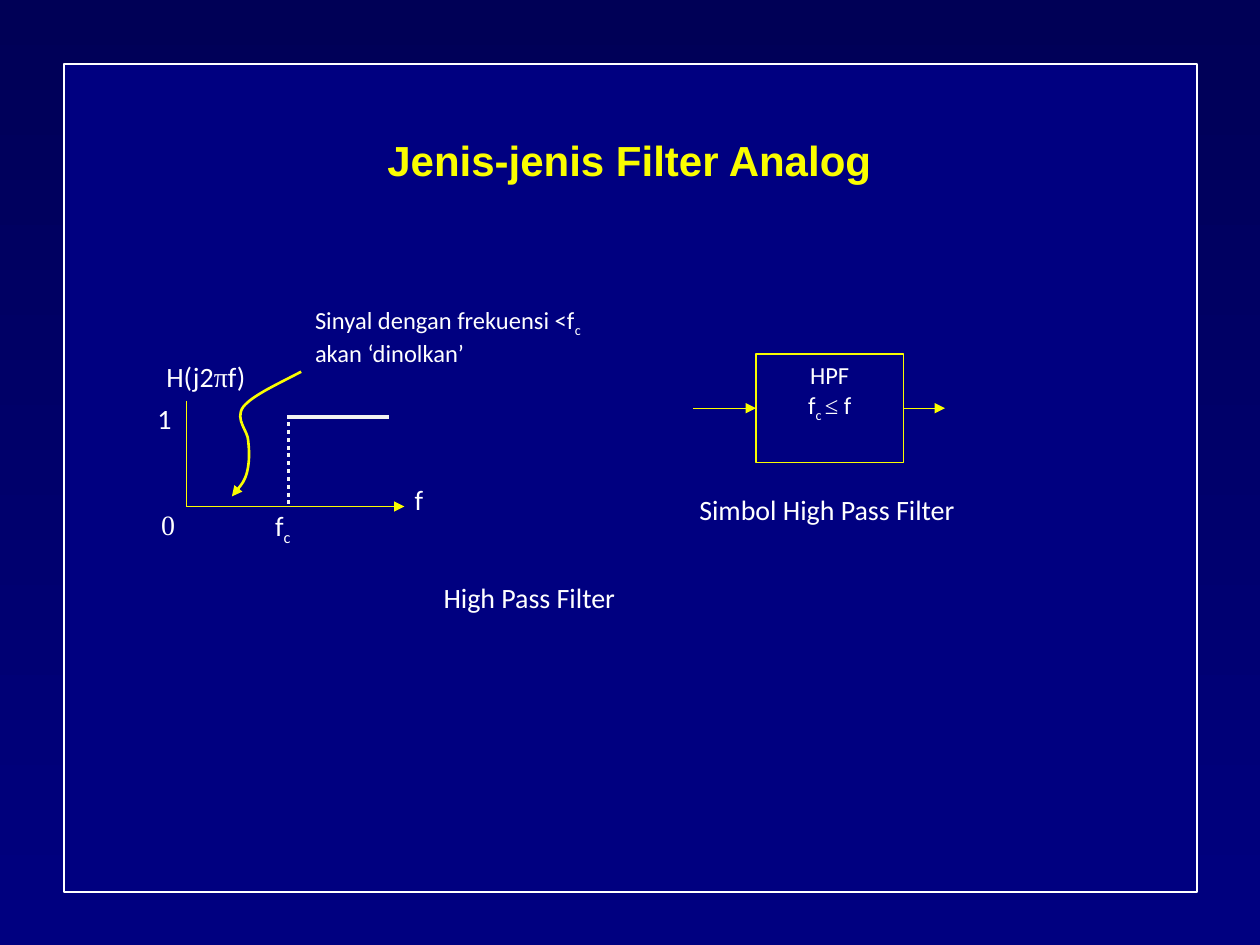
from dataclasses import dataclass

from lxml import etree
from pptx import Presentation
from pptx.dml.color import RGBColor
from pptx.enum.dml import MSO_LINE_DASH_STYLE as Dash
from pptx.enum.shapes import MSO_CONNECTOR as Connector, MSO_SHAPE as Shape
from pptx.enum.text import MSO_ANCHOR as Anchor, PP_ALIGN as Align
from pptx.oxml.ns import qn
from pptx.util import Inches, Pt


@dataclass(frozen=True)
class Theme:
    background_top: str = "000056"
    panel: str = "000080"
    white: str = "FFFFFF"
    response: str = "F2F2F2"
    yellow: str = "FAFD00"
    title_font: str = "Arial"
    body_font: str = "Calibri"
    symbol_font: str = "Times New Roman"
    title_size: float = 24
    label_size: float = 16
    note_size: float = 14
    thin: float = 0.75
    curve: float = 1.5
    thick: float = 2.25


THEME = Theme()


def color(value):
    return RGBColor.from_string(value)


def paint_background(slide):
    fill = slide.background.fill
    fill.gradient()
    fill.gradient_angle = 270
    for stop, value in zip(fill.gradient_stops, (THEME.background_top, THEME.panel)):
        stop.color.rgb = color(value)


def style_line(line, value, width, arrow=False, dash=None):
    line.color.rgb = color(value)
    line.width = Pt(width)
    if dash:
        line.dash_style = dash
    if arrow:
        outline = line._get_or_add_ln()
        etree.SubElement(outline, qn("a:tailEnd"), type="triangle")


def add_rectangle(slide, box, line_color, width, fill_color=None):
    shape = slide.shapes.add_shape(Shape.RECTANGLE, *map(Inches, box))
    shape.shadow.inherit = False
    if fill_color:
        shape.fill.solid()
        shape.fill.fore_color.rgb = color(fill_color)
    else:
        shape.fill.background()
    style_line(shape.line, line_color, width)
    return shape


def add_line(slide, start, end, value=THEME.yellow, width=THEME.thin, arrow=False, dash=None):
    connector = slide.shapes.add_connector(Connector.STRAIGHT, *map(Inches, start + end))
    style_line(connector.line, value, width, arrow, dash)
    etree.SubElement(connector._element.spPr, qn("a:effectLst"))
    return connector


def add_curve_arrow(slide, points):
    start, *controls = [tuple(map(Inches, point)) for point in points]
    builder = slide.shapes.build_freeform(*start)
    builder.add_line_segments(controls, close=False)
    shape = builder.convert_to_shape()
    shape.shadow.inherit = False
    shape.fill.background()
    style_line(shape.line, THEME.yellow, THEME.curve, arrow=True)
    outline = next(shape._element.iter(qn("a:path")))
    segments = outline.findall(qn("a:lnTo"))
    for first in range(0, len(segments), 3):
        bezier = etree.SubElement(outline, qn("a:cubicBezTo"))
        for segment in segments[first:first + 3]:
            bezier.append(segment[0])
            outline.remove(segment)


def add_run(paragraph, text, size, font=THEME.body_font, value=THEME.white, bold=False, subscript=False):
    run = paragraph.add_run()
    run.text = text
    run.font.size = Pt(size)
    run.font.name = font
    run.font.bold = bold
    run.font.color.rgb = color(value)
    if subscript:
        run.font._element.set("baseline", "-25000")


def add_label(slide, box, runs, size=THEME.label_size, align=Align.LEFT):
    frame = slide.shapes.add_textbox(*map(Inches, box)).text_frame
    frame.word_wrap = True
    frame.margin_left = frame.margin_right = frame.margin_top = frame.margin_bottom = 0
    paragraph = frame.paragraphs[0]
    paragraph.alignment = align
    paragraph.space_after = Pt(10)
    for text, options in runs:
        add_run(paragraph, text, size, **options)


def add_title(slide, text):
    frame = slide.shapes.add_textbox(*map(Inches, (1.08, 0.67, 7.83, 1.25))).text_frame
    frame.word_wrap = True
    frame.vertical_anchor = Anchor.MIDDLE
    paragraph = frame.paragraphs[0]
    paragraph.alignment = Align.CENTER
    paragraph.line_spacing = 0.9
    add_run(paragraph, text, THEME.title_size, THEME.title_font, THEME.yellow, bold=True)


def add_response_graph(slide):
    symbol = {"font": THEME.symbol_font}
    subscript = {"subscript": True}
    origin = (1.48, 4.02)
    add_line(slide, (2.28, 3.31), (3.09, 3.31), THEME.response, THEME.thick)
    add_line(slide, (2.29, 3.35), (2.29, 4.02), THEME.response, THEME.thick, dash=Dash.ROUND_DOT)
    add_line(slide, (1.48, 3.18), origin)
    add_line(slide, origin, (3.21, 4.02), arrow=True)
    add_label(slide, (1.32, 2.85, 0.97, 0.34), [("H(j2", {}), ("π", symbol), ("f)", {})])
    marks = [
        (1.25, 3.19, [("1", {})], Align.LEFT),
        (1.28, 4.03, [("0", symbol)], Align.LEFT),
        (2.13, 4.04, [("f", {}), ("c", subscript)], Align.CENTER),
        (3.21, 3.83, [("f", {})], Align.CENTER),
    ]
    for left, top, runs, align in marks:
        add_label(slide, (left, top, 0.23, 0.34), runs, align=align)
    add_curve_arrow(slide, [
        (2.39, 2.95),
        (2.2, 3.05), (2, 3.14), (1.93, 3.23),
        (1.86, 3.33), (1.97, 3.42), (1.97, 3.5),
        (1.98, 3.59), (1.98, 3.67), (1.96, 3.75),
        (1.94, 3.82), (1.89, 3.88), (1.84, 3.94),
    ])
    note = [("Sinyal dengan frekuensi <f", {}), ("c ", subscript), ("akan ‘dinolkan’", {})]
    add_label(slide, (2.5, 2.42, 2.19, 0.78), note, THEME.note_size)


def add_filter_symbol(slide):
    block = add_rectangle(slide, (6, 2.81, 1.17, 0.86), THEME.yellow, THEME.thin)
    frame = block.text_frame
    frame.word_wrap = True
    frame.vertical_anchor = Anchor.TOP
    paragraph = frame.paragraphs[0]
    paragraph.alignment = Align.CENTER
    paragraph.space_after = Pt(10)
    add_run(paragraph, "HPF", THEME.note_size)
    paragraph.add_line_break()
    add_run(paragraph, "f", THEME.note_size)
    add_run(paragraph, "c ", THEME.note_size, subscript=True)
    add_run(paragraph, "≤", THEME.note_size, THEME.symbol_font)
    add_run(paragraph, " f", THEME.note_size)
    add_line(slide, (5.5, 3.24), (6, 3.24), arrow=True).end_connect(block, 1)
    add_line(slide, (7.17, 3.24), (7.5, 3.24), arrow=True).begin_connect(block, 3)
    add_label(slide, (5.55, 3.91, 2.42, 0.44), [("Simbol High Pass Filter", {})])


def main():
    presentation = Presentation()
    presentation.slide_width = Inches(10)
    presentation.slide_height = Inches(7.5)
    slide = presentation.slides.add_slide(presentation.slide_layouts[6])
    paint_background(slide)
    add_rectangle(slide, (0.51, 0.51, 8.99, 6.57), THEME.white, 1, THEME.panel)
    add_title(slide, "Jenis-jenis Filter Analog")
    add_response_graph(slide)
    add_filter_symbol(slide)
    add_label(slide, (3.52, 4.61, 1.95, 0.44), [("High Pass Filter", {})])
    presentation.save("out.pptx")


if __name__ == "__main__":
    main()
